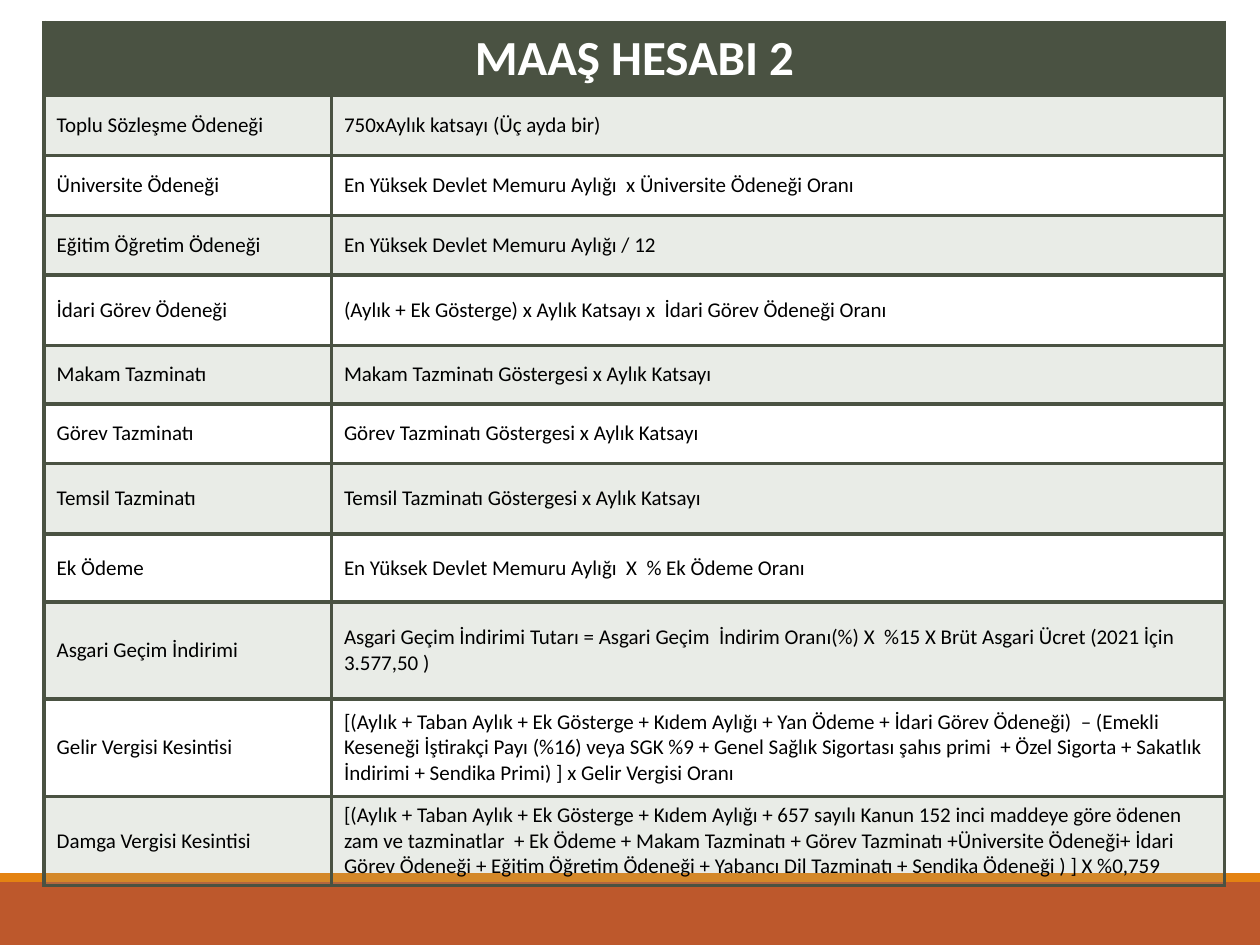
"""Build the salary calculation table slide."""
from typing import NamedTuple

import lxml.etree
import pptx
import pptx.dml.color
import pptx.enum.shapes
import pptx.enum.text
import pptx.oxml.ns
import pptx.util

Pt = pptx.util.Pt
RGBColor = pptx.dml.color.RGBColor
qn = pptx.oxml.ns.qn

DARK_GREEN = RGBColor(0x4A, 0x52, 0x42)
SAGE = RGBColor(0x94, 0xA0, 0x88)
RUST = RGBColor(0xBD, 0x58, 0x2C)
ORANGE = RGBColor(0xE4, 0x83, 0x12)
WHITE = RGBColor(0xFF, 0xFF, 0xFF)
BLACK = RGBColor(0, 0, 0)

FONT = "Calibri"
SLIDE_WIDTH = 720
SLIDE_HEIGHT = 540
COLUMN_WIDTHS = (164.2, 510.5)
HEADING = "MAAŞ HESABI 2"
HEADING_HEIGHT = 39.6
BORDER_WIDTH = 2.25
BAND_OPACITY = 20


class Band(NamedTuple):
    top: float
    height: float
    color: RGBColor


class PayItem(NamedTuple):
    name: str
    formula: str
    height: float


FOOTER_BANDS = (Band(504, 36, RUST), Band(499, 5, ORANGE))

PAY_ITEMS = (
    PayItem("Toplu Sözleşme Ödeneği", "750xAylık katsayı (Üç ayda bir)", 34.5),
    PayItem("Üniversite Ödeneği",
            "En Yüksek Devlet Memuru Aylığı  x Üniversite Ödeneği Oranı", 34.5),
    PayItem("Eğitim Öğretim Ödeneği", "En Yüksek Devlet Memuru Aylığı / 12", 34),
    PayItem("İdari Görev Ödeneği",
            "(Aylık + Ek Gösterge) x Aylık Katsayı x  İdari Görev Ödeneği Oranı", 40.3),
    PayItem("Makam Tazminatı", "Makam Tazminatı Göstergesi x Aylık Katsayı", 33.3),
    PayItem("Görev Tazminatı", "Görev Tazminatı Göstergesi x Aylık Katsayı", 34),
    PayItem("Temsil Tazminatı", "Temsil Tazminatı Göstergesi x Aylık Katsayı", 40.3),
    PayItem("Ek Ödeme", "En Yüksek Devlet Memuru Aylığı  X  % Ek Ödeme Oranı", 39),
    PayItem("Asgari Geçim İndirimi",
            "Asgari Geçim İndirimi Tutarı = Asgari Geçim  İndirim Oranı(%) X  %15 X "
            "Brüt Asgari Ücret (2021 İçin 3.577,50 )", 55.5),
    PayItem("Gelir Vergisi Kesintisi",
            "[(Aylık + Taban Aylık + Ek Gösterge + Kıdem Aylığı + Yan Ödeme + İdari Görev "
            "Ödeneği)  – (Emekli Keseneği İştirakçi Payı (%16) veya SGK %9 + Genel Sağlık "
            "Sigortası şahıs primi  + Özel Sigorta + Sakatlık İndirimi + Sendika Primi) ] "
            "x Gelir Vergisi Oranı", 55.5),
    PayItem("Damga Vergisi Kesintisi",
            "[(Aylık + Taban Aylık + Ek Gösterge + Kıdem Aylığı + 657 sayılı Kanun 152 inci "
            "maddeye göre ödenen zam ve tazminatlar  + Ek Ödeme + Makam Tazminatı + Görev "
            "Tazminatı +Üniversite Ödeneği+ İdari Görev Ödeneği + Eğitim Öğretim Ödeneği + "
            "Yabancı Dil Tazminatı + Sendika Ödeneği ) ] X %0,759", 40.3),
)


def draw_band(slide, band: Band) -> None:
    strip = slide.shapes.add_shape(
        pptx.enum.shapes.MSO_SHAPE.RECTANGLE,
        Pt(0), Pt(band.top), Pt(SLIDE_WIDTH), Pt(band.height))
    strip.shadow.inherit = False
    strip.fill.solid()
    strip.fill.fore_color.rgb = band.color
    strip.line.fill.background()


def add_borders(cell) -> None:
    properties = cell._tc.get_or_add_tcPr()
    for position, side in enumerate(("a:lnL", "a:lnR", "a:lnT", "a:lnB")):
        border = lxml.etree.Element(qn(side), w=str(int(Pt(BORDER_WIDTH))))
        solid = lxml.etree.SubElement(border, qn("a:solidFill"))
        lxml.etree.SubElement(solid, qn("a:srgbClr"), val=str(DARK_GREEN))
        properties.insert(position, border)


def fill_cell(cell, color: RGBColor, opacity: int = 100) -> None:
    cell.fill.solid()
    cell.fill.fore_color.rgb = color
    if opacity < 100:
        tint = cell._tc.tcPr.find(qn("a:solidFill")).find(qn("a:srgbClr"))
        lxml.etree.SubElement(tint, qn("a:alpha"), val=str(opacity * 1000))


def write_cell(cell, text: str, size: float, color: RGBColor, bold: bool = False) -> None:
    cell.text = text
    font = cell.text_frame.paragraphs[0].font
    font.name = FONT
    font.size = Pt(size)
    font.bold = bold
    font.color.rgb = color


def draw_heading(table) -> None:
    table.rows[0].height = Pt(HEADING_HEIGHT)
    heading = table.cell(0, 0)
    heading.merge(table.cell(0, 1))
    write_cell(heading, HEADING, 28, WHITE, bold=True)
    heading.text_frame.paragraphs[0].alignment = pptx.enum.text.PP_ALIGN.CENTER
    for cell in table.rows[0].cells:
        fill_cell(cell, DARK_GREEN)
        add_borders(cell)


def draw_pay_item(table, row: int, item: PayItem) -> None:
    table.rows[row].height = Pt(item.height)
    for cell, text in zip(table.rows[row].cells, (item.name, item.formula)):
        write_cell(cell, text, 12, BLACK)
        cell.vertical_anchor = pptx.enum.text.MSO_ANCHOR.MIDDLE
        if row % 2:
            fill_cell(cell, SAGE, BAND_OPACITY)
        else:
            cell.fill.background()
        add_borders(cell)


def draw_pay_table(slide) -> None:
    height = HEADING_HEIGHT + sum(item.height for item in PAY_ITEMS)
    table = slide.shapes.add_table(
        len(PAY_ITEMS) + 1, len(COLUMN_WIDTHS),
        Pt(25.2), Pt(12.8), Pt(sum(COLUMN_WIDTHS)), Pt(height)).table
    table.first_row = False
    table.horz_banding = False
    for column, width in zip(table.columns, COLUMN_WIDTHS):
        column.width = Pt(width)
    draw_heading(table)
    for row, item in enumerate(PAY_ITEMS, start=1):
        draw_pay_item(table, row, item)


def main() -> None:
    presentation = pptx.Presentation()
    presentation.slide_width = Pt(SLIDE_WIDTH)
    presentation.slide_height = Pt(SLIDE_HEIGHT)
    slide = presentation.slides.add_slide(presentation.slide_layouts[6])
    for band in FOOTER_BANDS:
        draw_band(slide, band)
    draw_pay_table(slide)
    presentation.save("out.pptx")


if __name__ == "__main__":
    main()
